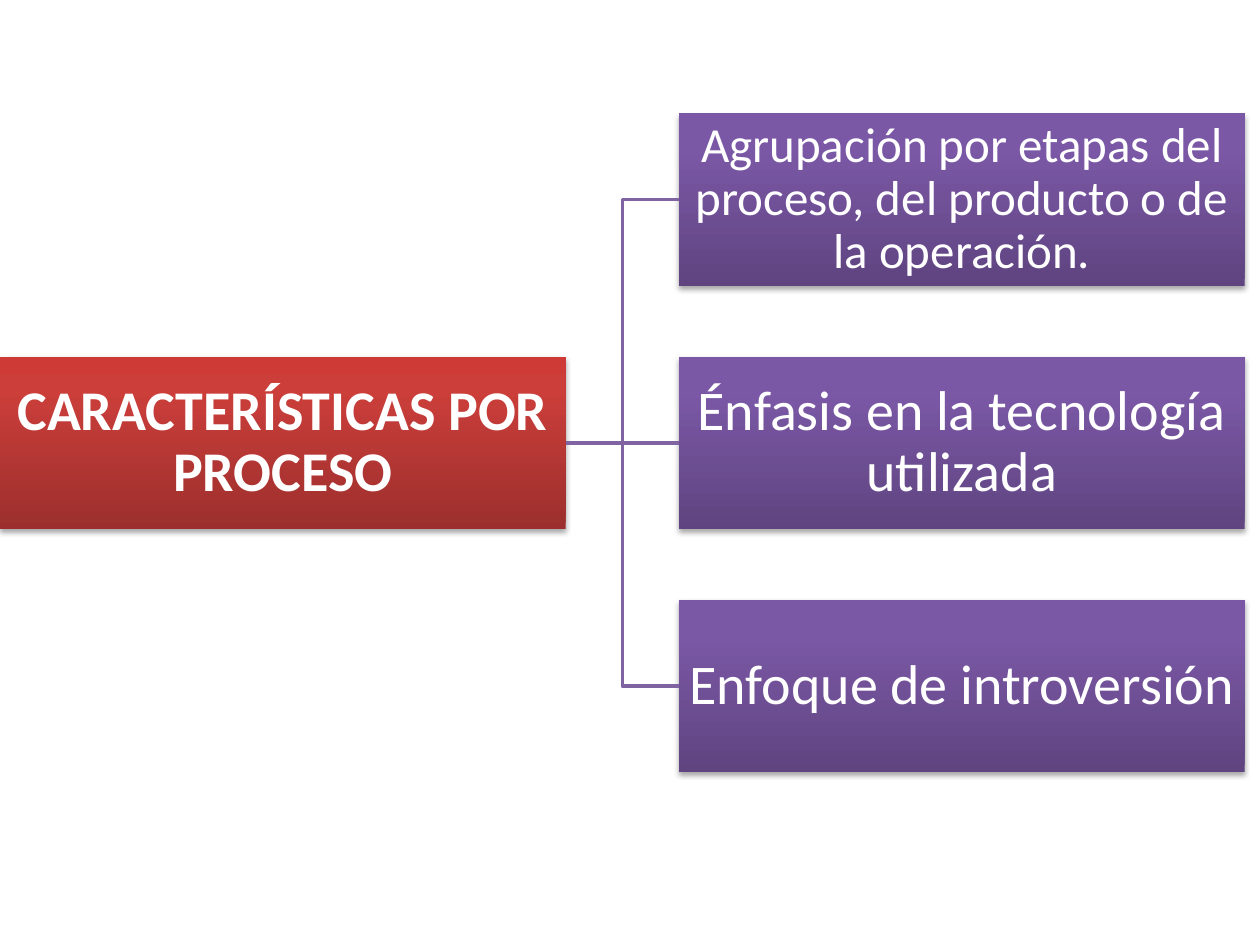
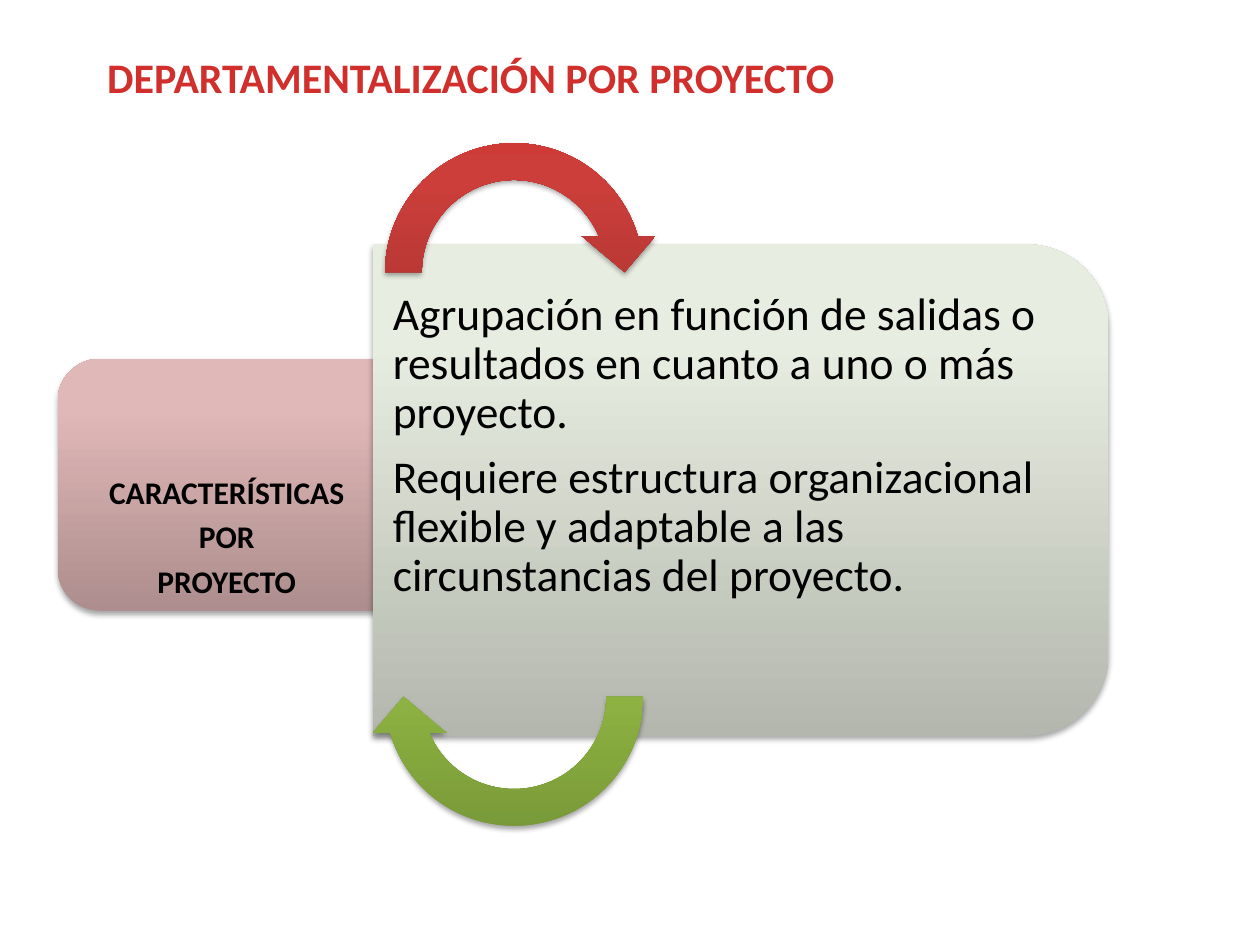
from lxml.etree import SubElement
from pptx import Presentation
from pptx.dml.color import RGBColor
from pptx.enum.shapes import MSO_CONNECTOR, MSO_SHAPE
from pptx.enum.text import MSO_ANCHOR, MSO_AUTO_SIZE, PP_ALIGN
from pptx.oxml import parse_xml
from pptx.oxml.ns import nsdecls, qn
from pptx.util import Pt

# Content
PROCESS_TITLE = "CARACTERÍSTICAS POR PROCESO"
PROCESS_TRAITS = [  # text, size
    ("Agrupación por etapas del proceso, del producto o de la operación.", 28),
    ("Énfasis en la tecnología utilizada", 32),
    ("Enfoque de introversión", 32),
]
PROJECT_TITLE = "DEPARTAMENTALIZACIÓN POR PROYECTO"
PROJECT_LABEL = ["CARACTERÍSTICAS", "POR", "PROYECTO"]
PROJECT_TRAITS = [
    "Agrupación en función de salidas o resultados en cuanto a uno o más proyecto.",
    "Requiere estructura organizacional flexible y adaptable a las circunstancias del proyecto.",
]

# Shared style
FONT = "Calibri"
WHITE, BLACK, TITLE_RED, LINE_PURPLE = "FFFFFF", "000000", "D02F2C", "8064A2"
GRADIENTS = {  # from bottom to top, stops at 0, 80 and 100 %
    "red": ("9C2F2D", "CB3E3A", "CE3B37"),
    "purple": ("5F4480", "7B58A6", "7C57A8"),
    "green": ("779737", "9BC348", "9DC746"),
    "pink": ("AD8D8D", "E0B8B7", "E2B8B7"),
    "sage": ("B3B7AD", "E8EDE1", "E9EFE2"),
}


def color(hex_code):
    return RGBColor.from_string(hex_code)


def write(shape, lines, size, ink, bold=False, align=PP_ALIGN.LEFT, spacing=0.9,
          gap=0, anchor=MSO_ANCHOR.TOP, insets=(0, 0, 0, 0)):
    frame = shape.text_frame
    frame.word_wrap = True
    frame.auto_size = MSO_AUTO_SIZE.NONE
    frame.vertical_anchor = anchor
    (frame.margin_left, frame.margin_top,
     frame.margin_right, frame.margin_bottom) = map(Pt, insets)
    frame.text = "\n".join(lines)
    for para in frame.paragraphs:
        para.alignment = align
        para.line_spacing = spacing
        para.space_before, para.space_after = Pt(0), Pt(gap)
        para.font.name, para.font.size, para.font.bold = FONT, Pt(size), bold
        para.font.color.rgb = color(ink)


def add_block(page, kind, left, top, width, height, gradient, turn=0):
    """Add a shaded shape; the frame given is the one seen after turning."""
    middle_x, middle_y = left + width / 2, top + height / 2
    if turn % 180:
        width, height = height, width
    shape = page.shapes.add_shape(kind, Pt(middle_x - width / 2), Pt(middle_y - height / 2),
                                  Pt(width), Pt(height))
    shape.rotation = turn
    shape.line.fill.background()
    stops = "".join(f'<a:gs pos="{place}"><a:srgbClr val="{code}"/></a:gs>'
                    for place, code in zip((0, 80000, 100000), GRADIENTS[gradient]))
    fill = parse_xml(f'<a:gradFill {nsdecls("a")} rotWithShape="0"><a:gsLst>{stops}</a:gsLst>'
                     '<a:lin ang="16200000" scaled="0"/></a:gradFill>')
    properties = shape._element.spPr
    properties.find(qn("a:ln")).addprevious(fill)
    shape.shadow.inherit = False
    properties.find(qn("a:effectLst")).append(parse_xml(
        f'<a:outerShdw {nsdecls("a")} blurRad="{Pt(3.1)}" dist="{Pt(1.8)}" dir="5400000" '
        'rotWithShape="0"><a:srgbClr val="000000"><a:alpha val="35000"/></a:srgbClr></a:outerShdw>'))
    return shape


def add_text(page, left, top, width, height, lines, size, **style):
    box = page.shapes.add_textbox(Pt(left), Pt(top), Pt(width), Pt(height))
    write(box, lines, size, BLACK, **style)


def link(page, parent, child):
    level = parent.top == child.top
    kind = MSO_CONNECTOR.STRAIGHT if level else MSO_CONNECTOR.ELBOW
    line = page.shapes.add_connector(kind, 0, 0, 0, 0)
    line.begin_connect(parent, 3)
    line.end_connect(child, 1)
    line.line.color.rgb = color(LINE_PURPLE)
    line.line.width = Pt(2)
    SubElement(line._element.spPr, qn("a:effectLst"))


def build_process(deck):
    page = deck.slides.add_slide(deck.slide_layouts[6])
    width, height, pitch, first_top, trait_left = 323.3, 98.6, 139, 64.8, 388
    label = dict(align=PP_ALIGN.CENTER, anchor=MSO_ANCHOR.MIDDLE, insets=(1.6,) * 4)

    # Root box, level with the middle trait
    root = add_block(page, MSO_SHAPE.RECTANGLE, 0, first_top + pitch, width, height, "red")
    write(root, [PROCESS_TITLE], 32, WHITE, bold=True, **label)

    # Traits and their links
    for row, (text, size) in enumerate(PROCESS_TRAITS):
        trait = add_block(page, MSO_SHAPE.RECTANGLE, trait_left, first_top + row * pitch,
                          width, height, "purple")
        write(trait, [text], size, WHITE, **label)
        link(page, root, trait)


def build_project(deck):
    page = deck.slides.add_slide(deck.slide_layouts[5])

    # Title
    title = page.shapes.title
    title.left, title.top, title.width, title.height = Pt(54), Pt(26), Pt(538.5), Pt(65.5)
    write(title, [PROJECT_TITLE], 24, TITLE_RED, bold=True, spacing=1,
          insets=(7.2, 3.6, 7.2, 3.6))

    # Label tab and trait panel
    add_block(page, MSO_SHAPE.ROUND_2_SAME_RECTANGLE, 33, 205, 189, 144, "pink", turn=270)
    add_text(page, 40.3, 272.5, 181.5, 76, PROJECT_LABEL, 18, bold=True,
             align=PP_ALIGN.CENTER, gap=6, insets=(5, 0, 8, 0))
    add_block(page, MSO_SHAPE.ROUND_2_SAME_RECTANGLE, 213, 139.7, 420.5, 280.8, "sage", turn=90)
    add_text(page, 213, 153.4, 407, 253.4, PROJECT_TRAITS, 26, gap=8.9, insets=(11.5, 13, 8, 13))

    # Cycle arrows
    for top, gradient, turn in ((71.3, "red", 0), (313.9, "green", 180)):
        add_block(page, MSO_SHAPE.CIRCULAR_ARROW, 209.5, top, 168.5, 168.5, gradient, turn)


def main():
    deck = Presentation()
    deck.slide_width, deck.slide_height = Pt(720), Pt(540)
    build_process(deck)
    build_project(deck)
    deck.save("out.pptx")


if __name__ == "__main__":
    main()
